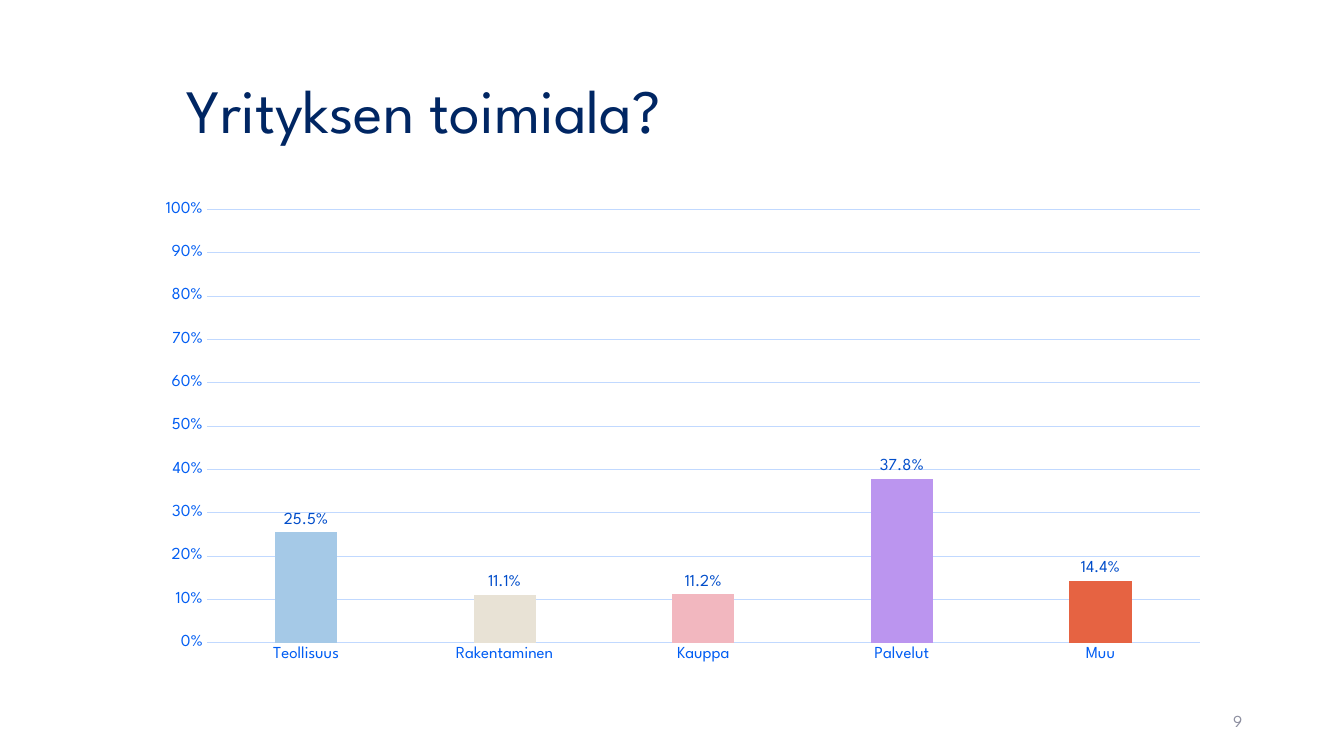
import lxml.etree
import pptx
import pptx.chart.data
import pptx.dml.color
import pptx.enum.chart
import pptx.enum.text
import pptx.oxml.ns
import pptx.util

TITLE = "Yrityksen toimiala?"
PAGE = "9"
SERIES = "Series 1"
BARS = [
    ("Teollisuus", 0.255, "A5C9E7"),
    ("Rakentaminen", 0.111, "E8E2D5"),
    ("Kauppa", 0.112, "F2B7BF"),
    ("Palvelut", 0.378, "BB95EF"),
    ("Muu", 0.144, "E66342"),
]
PLOT = {"x": 0.042, "y": 0.014, "w": 0.917, "h": 0.906}
THEME = {
    "font": "League Spartan",
    "title": (44, "002663"),
    "page": (12, "8C8E9F"),
    "base": (10, "002663"),
    "axis": (12, "005DF3"),
    "label": (12, "004DCA"),
    "grid": (0.75, "C1D9FF"),
}

Inches = pptx.util.Inches
qn = pptx.oxml.ns.qn
enum = pptx.enum.chart


def color(code):
    return pptx.dml.color.RGBColor.from_string(code)


def style(font, role):
    size, code = THEME[role]
    font.name = THEME["font"]
    font.size = pptx.util.Pt(size)
    font.bold = False
    font.color.rgb = color(code)


def rule(line):
    width, code = THEME["grid"]
    line.width = pptx.util.Pt(width)
    line.color.rgb = color(code)


def add_text(slide, box, text, role, align):
    frame = slide.shapes.add_textbox(*map(Inches, box)).text_frame
    frame.word_wrap = True
    frame.vertical_anchor = pptx.enum.text.MSO_ANCHOR.MIDDLE
    para = frame.paragraphs[0]
    para.alignment = align
    run = para.add_run()
    run.text = text
    style(run.font, role)
    return para


def place_plot(chart):
    area = chart.element.find(".//" + qn("c:plotArea"))
    for old in area.findall(qn("c:layout")):
        area.remove(old)
    layout = lxml.etree.Element(qn("c:layout"))
    area.insert(0, layout)
    manual = lxml.etree.SubElement(layout, qn("c:manualLayout"))
    parts = [("layoutTarget", "inner"), ("xMode", "edge"), ("yMode", "edge")]
    for name, value in parts + list(PLOT.items()):
        lxml.etree.SubElement(manual, qn("c:" + name)).set("val", str(value))


def add_bars(slide, box):
    names, values, codes = zip(*BARS)
    data = pptx.chart.data.CategoryChartData(number_format="0.0%")
    data.categories = names
    data.add_series(SERIES, values)
    chart = slide.shapes.add_chart(
        enum.XL_CHART_TYPE.COLUMN_CLUSTERED, *map(Inches, box), data
    ).chart
    chart.has_legend = False
    chart.has_title = False
    style(chart.font, "base")
    place_plot(chart)

    for axis in (chart.category_axis, chart.value_axis):
        axis.major_tick_mark = enum.XL_TICK_MARK.NONE
        axis.minor_tick_mark = enum.XL_TICK_MARK.NONE
        style(axis.tick_labels.font, "axis")
    rule(chart.category_axis.format.line)
    scale = chart.value_axis
    scale.minimum_scale = 0
    scale.maximum_scale = 1
    scale.major_unit = 0.1
    scale.tick_labels.number_format = "0%"
    scale.tick_labels.number_format_is_linked = False
    scale.format.line.fill.background()
    scale.has_major_gridlines = True
    rule(scale.major_gridlines.format.line)

    plot = chart.plots[0]
    plot.vary_by_categories = False
    plot.gap_width = 219
    plot.overlap = -27
    series = plot.series[0]
    for index, code in enumerate(codes):
        fill = series.points[index].format.fill
        fill.solid()
        fill.fore_color.rgb = color(code)
    labels = series.data_labels
    labels.show_value = True
    labels.number_format = "0.0%"
    labels.number_format_is_linked = False
    labels.position = enum.XL_LABEL_POSITION.OUTSIDE_END
    style(labels.font, "label")


def main():
    deck = pptx.Presentation()
    deck.slide_width = Inches(13.33)
    deck.slide_height = Inches(7.5)
    slide = deck.slides.add_slide(deck.slide_layouts[6])
    align = pptx.enum.text.PP_ALIGN
    title = add_text(slide, (1.75, 0.4, 10.59, 1.45), TITLE, "title", align.LEFT)
    title.line_spacing = 0.9
    add_text(slide, (9.42, 6.95, 3, 0.4), PAGE, "page", align.RIGHT)
    add_bars(slide, (1.6, 2, 10.74, 4.76))
    deck.save("out.pptx")


if __name__ == "__main__":
    main()
